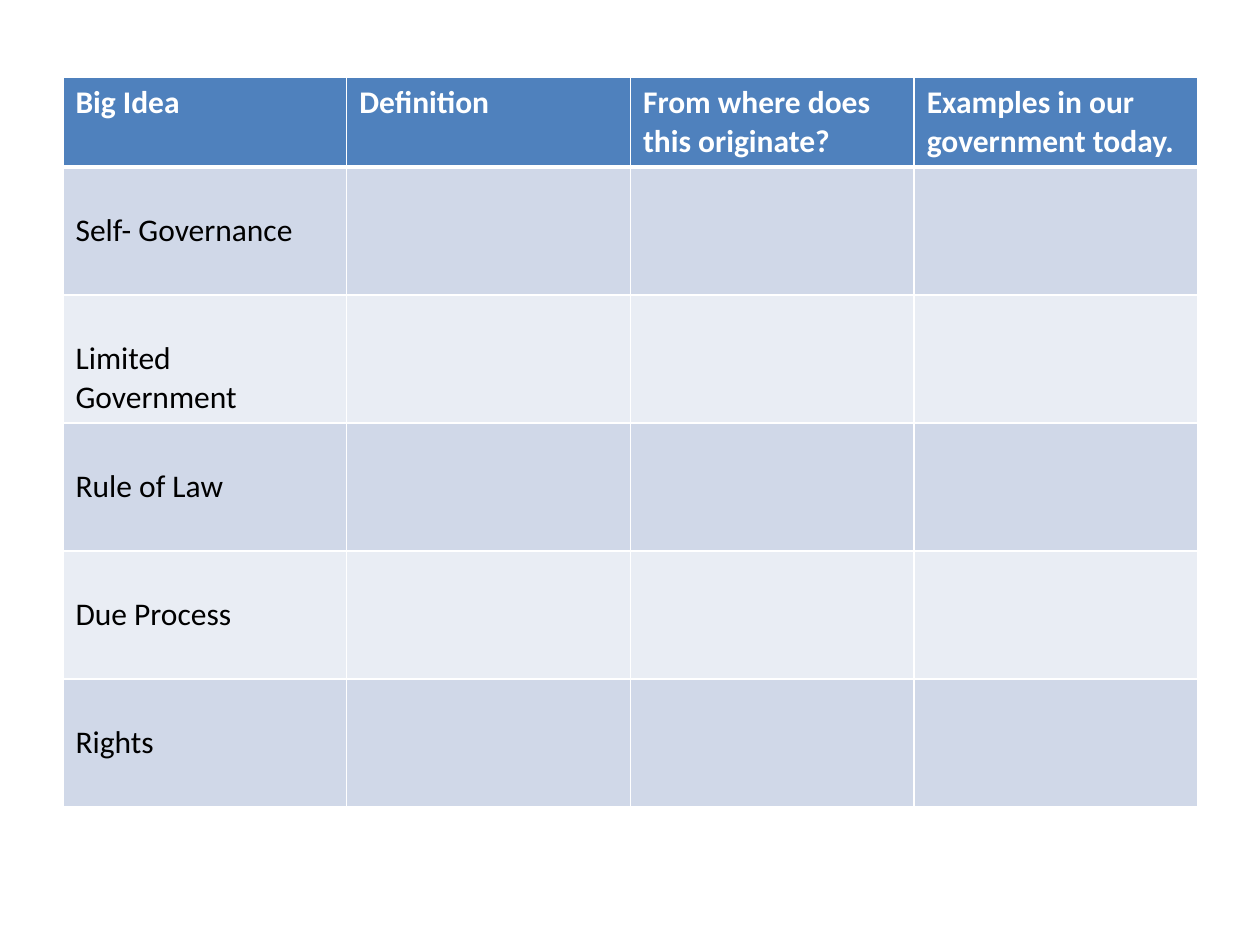
from lxml import etree
from pptx import Presentation
from pptx.dml.color import RGBColor
from pptx.oxml.ns import qn
from pptx.util import Cm, Pt

WHITE = RGBColor(0xFF, 0xFF, 0xFF)
BLACK = RGBColor(0x00, 0x00, 0x00)
HEADER_BLUE = RGBColor(0x4F, 0x81, 0xBD)
DARK_BAND = RGBColor(0xD0, 0xD8, 0xE8)
LIGHT_BAND = RGBColor(0xE9, 0xED, 0xF4)

HEADERS = [
    "Big Idea",
    "Definition",
    "From where does this originate?",
    "Examples in our government today.",
]
BIG_IDEAS = ["Self- Governance", "Limited Government", "Rule of Law", "Due Process", "Rights"]
HEADER_HEIGHT = Cm(1.78)
IDEA_HEIGHT = Cm(2.58)
COLUMN_WIDTH = Cm(5.72)


def write_cell(cell, text, *, fill, color=BLACK, bold=False, top=Cm(0.9)):
    cell.fill.solid()
    cell.fill.fore_color.rgb = fill
    cell.margin_top = top
    paragraph = cell.text_frame.paragraphs[0]
    paragraph.font.size = Pt(18)
    if text:
        run = paragraph.add_run()
        run.text = text
        run.font.name = "Calibri"
        run.font.size = Pt(18)
        run.font.bold = bold
        run.font.color.rgb = color


def add_borders(cell, **widths):
    properties = cell._tc.get_or_add_tcPr()
    for position, side in enumerate("LRTB"):
        line = etree.Element(qn(f"a:ln{side}"), w=str(Pt(widths.get(side, 1))))
        fill = etree.SubElement(line, qn("a:solidFill"))
        etree.SubElement(fill, qn("a:srgbClr"), val=str(WHITE))
        properties.insert(position, line)


presentation = Presentation()
presentation.slide_width = Cm(25.4)
presentation.slide_height = Cm(19.05)
slide = presentation.slides.add_slide(presentation.slide_layouts[6])

table = slide.shapes.add_table(
    len(BIG_IDEAS) + 1,
    len(HEADERS),
    Cm(1.27),
    Cm(1.56),
    COLUMN_WIDTH * len(HEADERS),
    HEADER_HEIGHT + IDEA_HEIGHT * len(BIG_IDEAS),
).table

for column in table.columns:
    column.width = COLUMN_WIDTH
for row in table.rows:
    row.height = IDEA_HEIGHT
table.rows[0].height = HEADER_HEIGHT

for column_index, header in enumerate(HEADERS):
    cell = table.cell(0, column_index)
    write_cell(cell, header, fill=HEADER_BLUE, color=WHITE, bold=True, top=Cm(0.13))
    add_borders(cell, B=3)

for row_index, idea in enumerate(BIG_IDEAS, start=1):
    band = DARK_BAND if row_index % 2 else LIGHT_BAND
    for column_index in range(len(HEADERS)):
        cell = table.cell(row_index, column_index)
        write_cell(cell, idea if column_index == 0 else "", fill=band)
        add_borders(cell, T=3 if row_index == 1 else 1)

presentation.save("out.pptx")
